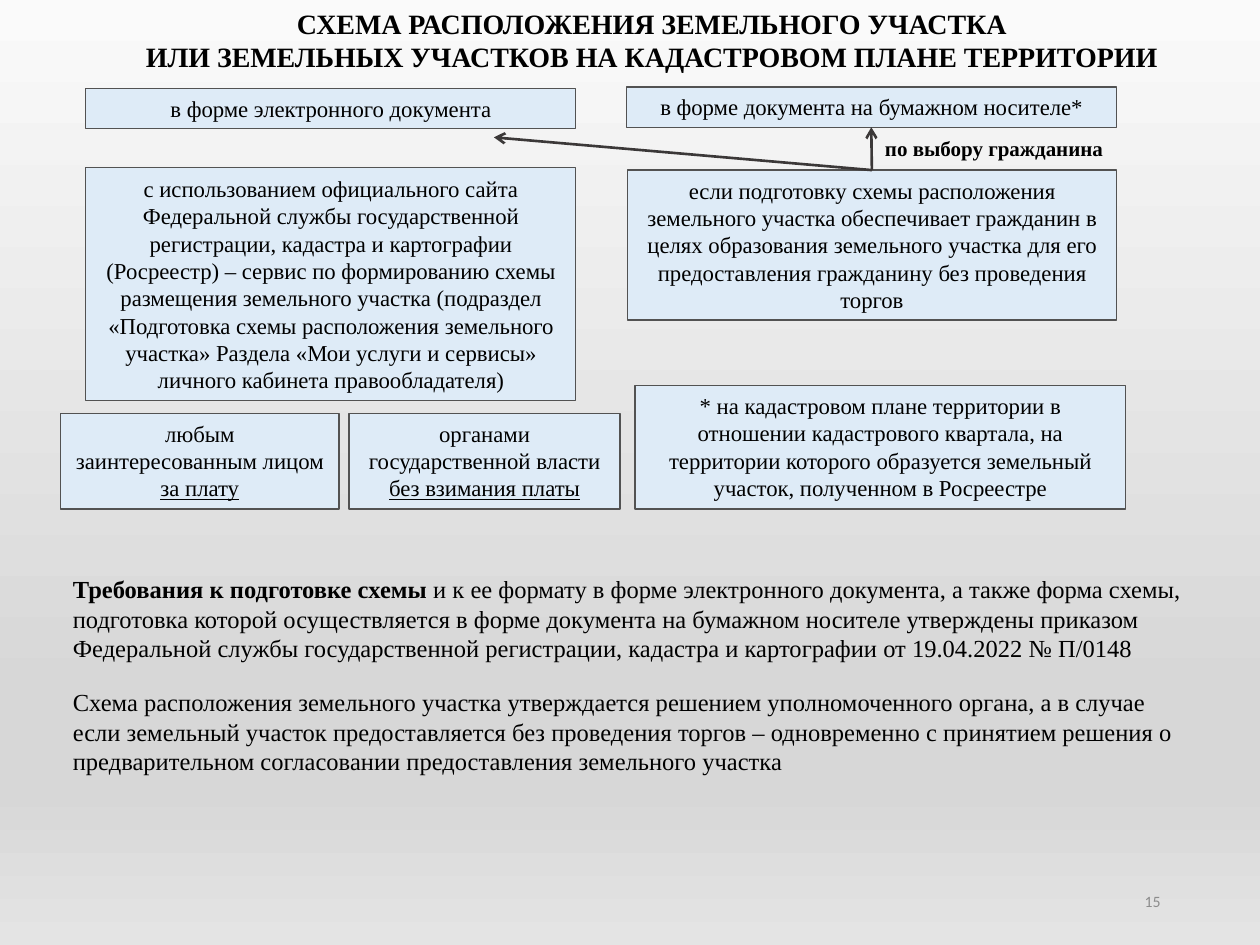
from lxml.etree import SubElement
from pptx import Presentation
from pptx.dml.color import RGBColor
from pptx.enum.shapes import MSO_CONNECTOR, MSO_SHAPE
from pptx.enum.text import MSO_ANCHOR, PP_ALIGN
from pptx.oxml.ns import qn
from pptx.util import Inches, Pt

SERIF = "Times New Roman"
TOP, BOTTOM = 0, 2
BACKGROUND_STOPS = [(0, "FAFAFA"), (74, "D7D7D7"), (83, "D7D7D7"), (100, "E4E4E4")]


def color(value):
    """Turn a hex string into a colour."""
    return RGBColor.from_string(value)


def paint_background(slide):
    """Fill the background with a vertical grey gradient."""
    fill = slide.background.fill
    fill.gradient()
    gradient = slide.background._cSld.find(".//" + qn("a:gradFill"))
    stops = gradient.find(qn("a:gsLst"))
    for stop in list(stops):
        stops.remove(stop)
    for position, value in BACKGROUND_STOPS:
        stop = SubElement(stops, qn("a:gs"), pos=str(position * 1000))
        SubElement(stop, qn("a:srgbClr"), val=value)
    gradient.find(qn("a:lin")).set("ang", "5400000")


def write_text(shape, paragraphs, size, align=PP_ALIGN.CENTER, anchor=MSO_ANCHOR.TOP,
               space_after=0, text_color="000000", **base):
    """Write paragraphs, each a list of (text, format) runs."""
    frame = shape.text_frame
    frame.word_wrap = True
    frame.vertical_anchor = anchor
    for index, runs in enumerate(paragraphs):
        paragraph = frame.add_paragraph() if index else frame.paragraphs[0]
        paragraph.alignment = align
        if index < len(paragraphs) - 1:
            paragraph.space_after = Pt(space_after)
        for text, changes in runs:
            run = paragraph.add_run()
            run.text = text
            run.font.color.rgb = color(text_color)
            values = {"name": SERIF, "size": Pt(size), **base, **changes}
            for name, value in values.items():
                setattr(run.font, name, value)


def add_label(slide, box, paragraphs, size, **options):
    """Place text without a frame in the given box."""
    label = slide.shapes.add_textbox(*map(Inches, box))
    write_text(label, paragraphs, size, **options)


def add_card(slide, box, paragraphs, **options):
    """Place a pale blue framed card in the given box."""
    card = slide.shapes.add_shape(MSO_SHAPE.RECTANGLE, *map(Inches, box))
    card.shadow.inherit = False
    card.fill.solid()
    card.fill.fore_color.rgb = color("DEEBF7")
    card.line.color.rgb = color("525252")
    card.line.width = Pt(0.75)
    write_text(card, paragraphs, 13, **options)
    return card


def add_arrow(slide, source, left, top, target=None):
    """Draw an arrow from the top of a card to a point or to a card's bottom."""
    end = Inches(left), Inches(top)
    arrow = slide.shapes.add_connector(MSO_CONNECTOR.STRAIGHT, 0, 0, *end)
    arrow.begin_connect(source, TOP)
    if target is not None:
        arrow.end_connect(target, BOTTOM)
    arrow.line.color.rgb = color("3B3838")
    arrow.line.width = Pt(1.5)
    SubElement(arrow.line._get_or_add_ln(), qn("a:tailEnd"), type="arrow")
    SubElement(arrow._element.spPr, qn("a:effectLst"))


def add_electronic_form(slide, left, top):
    """Place the column about the electronic document."""
    width = 3.89
    add_card(slide, (left, top, width, 0.32), [[("в форме электронного документа", {})]])
    add_card(slide, (left, top + 0.63, width, 1.85), [
        [("с использованием официального сайта Федеральной службы государственной "
          "регистрации, кадастра и картографии", {})],
        [("(Росреестр) – сервис по формированию схемы размещения земельного участка "
          "(подраздел «Подготовка схемы расположения земельного участка» Раздела "
          "«Мои услуги и сервисы» личного кабинета правообладателя)", {})],
    ], anchor=MSO_ANCHOR.MIDDLE)
    users = [
        (-0.2, 2.21, "любым заинтересованным лицом", "за плату"),
        (2.09, 2.15, "органами государственной власти", "без взимания платы"),
    ]
    for offset, user_width, user, price in users:
        add_card(slide, (left + offset, top + 2.58, user_width, 0.76),
                 [[(user, {})], [(price, {"underline": True})]])


def add_paper_form(slide, left, top):
    """Place the column about the paper document, with the citizen's choice."""
    width = 3.89
    paper = add_card(slide, (left, top, width, 0.32),
                     [[("в форме документа на бумажном носителе*", {})]])
    citizen = add_card(slide, (left + 0.01, top + 0.66, 3.88, 1.19), [[(
        "если подготовку схемы расположения земельного участка обеспечивает гражданин "
        "в целях образования земельного участка для его предоставления гражданину "
        "без проведения торгов", {})]])
    add_arrow(slide, citizen, left - 1.05, top + 0.4)
    add_arrow(slide, citizen, left + width / 2, top + 0.32, paper)
    add_label(slide, (left + 1.95, top + 0.34, 1.94, 0.3),
              [[("по выбору гражданина", {})]], 12, bold=True)
    add_card(slide, (left + 0.07, top + 2.37, width, 0.98), [[(
        "* на кадастровом плане территории в отношении кадастрового квартала, "
        "на территории которого образуется земельный участок, "
        "полученном в Росреестре", {})]])


def add_requirements(slide, box):
    """Place the two closing paragraphs."""
    add_label(slide, box, [
        [("Требования к подготовке схемы", {"bold": True}),
         (" и к ее формату в форме электронного документа, а также форма схемы, "
          "подготовка которой осуществляется в форме документа на бумажном носителе "
          "утверждены приказом Федеральной службы государственной регистрации, "
          "кадастра и картографии от 19.04.2022 № П/0148", {})],
        [("Схема расположения земельного участка утверждается решением уполномоченного "
          "органа, а в случае если земельный участок предоставляется без проведения "
          "торгов – одновременно с принятием решения о предварительном согласовании "
          "предоставления земельного участка", {})],
    ], 14, align=PP_ALIGN.LEFT, space_after=14)


def main():
    """Build and save the slide."""
    presentation = Presentation()
    presentation.slide_width = Inches(10)
    presentation.slide_height = Inches(7.5)
    slide = presentation.slides.add_slide(presentation.slide_layouts[6])
    paint_background(slide)
    add_label(slide, (0.48, 0, 9.39, 0.64), [
        [("СХЕМА РАСПОЛОЖЕНИЯ ЗЕМЕЛЬНОГО УЧАСТКА", {})],
        [("ИЛИ ЗЕМЕЛЬНЫХ УЧАСТКОВ НА КАДАСТРОВОМ ПЛАНЕ ТЕРРИТОРИИ", {})],
    ], 16, bold=True)
    add_electronic_form(slide, 0.68, 0.7)
    add_paper_form(slide, 4.97, 0.69)
    add_requirements(slide, (0.48, 4.51, 9.14, 1.72))
    add_label(slide, (7.06, 6.95, 2.25, 0.4), [[("15", {})]], 9, align=PP_ALIGN.RIGHT,
              anchor=MSO_ANCHOR.MIDDLE, text_color="8C8C8C", name="Calibri")
    presentation.save("out.pptx")


if __name__ == "__main__":
    main()
